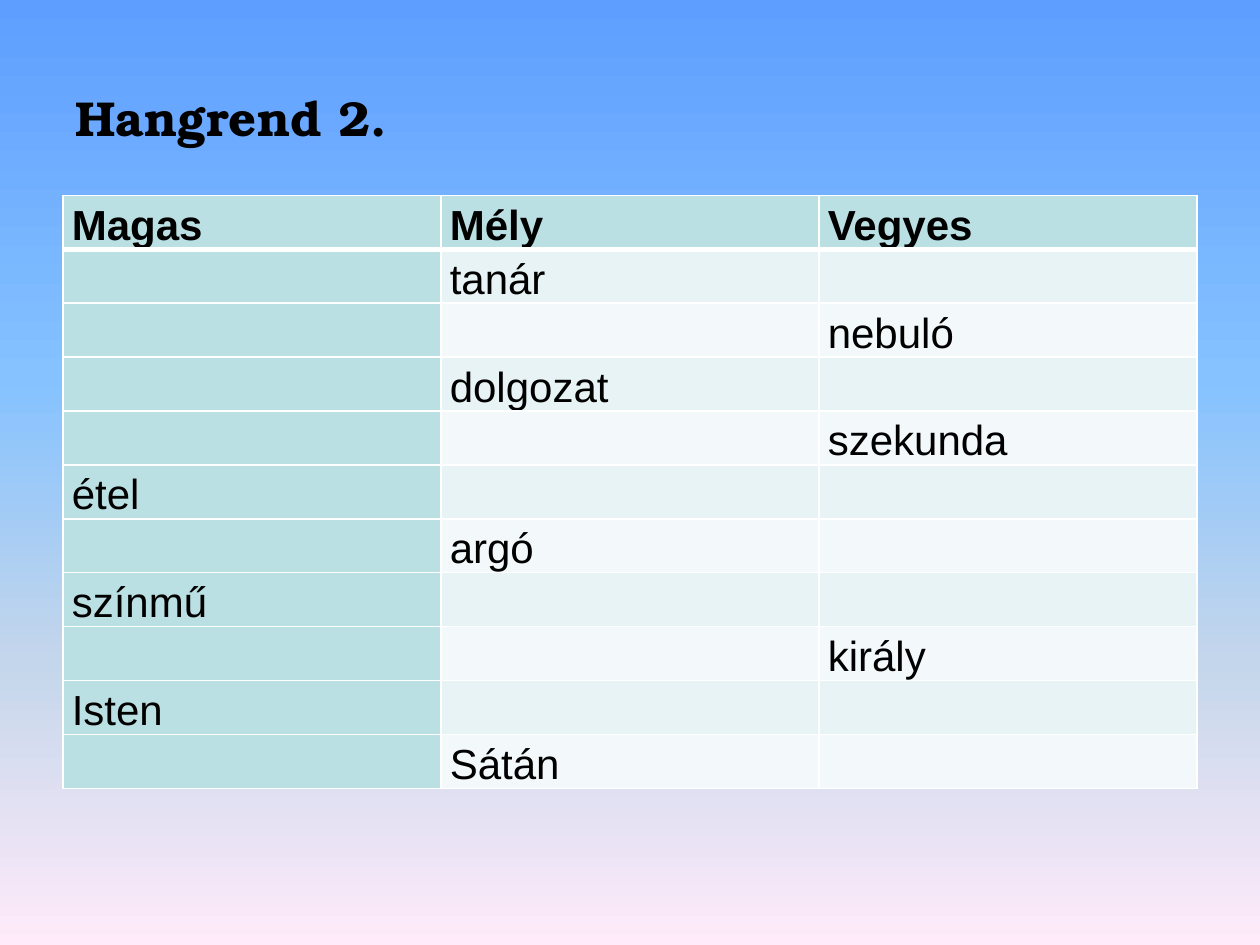
from lxml.etree import SubElement
from pptx import Presentation
from pptx.dml.color import RGBColor as RGB
from pptx.enum.text import MSO_ANCHOR as ANCHOR, PP_ALIGN as ALIGN
from pptx.oxml.ns import qn
from pptx.util import Inches, Pt

COLORS = {
    "text": "000000",
    "border": "FFFFFF",
    "head": "BBE0E3",
    "odd": "E7F3F4",
    "even": "F3F9FA",
}
SKY = [(0, "5E9EFF"), (40, "85C2FF"), (70, "C4D6EB"), (100, "FFEBFA")]
HEADINGS = ["Magas", "Mély", "Vegyes"]
WORDS = [
    ("tanár", "Mély"),
    ("nebuló", "Vegyes"),
    ("dolgozat", "Mély"),
    ("szekunda", "Vegyes"),
    ("étel", "Magas"),
    ("argó", "Mély"),
    ("színmű", "Magas"),
    ("király", "Vegyes"),
    ("Isten", "Magas"),
    ("Sátán", "Mély"),
]


def write(tf, text, font="Arial", size=24, bold=False, spacing=None):
    p = tf.paragraphs[0]
    p.alignment = ALIGN.LEFT
    p.line_spacing = spacing
    r = p.add_run()
    r.text = text
    r.font.name = font
    r.font.size = Pt(size)
    r.font.bold = bold
    r.font.color.rgb = RGB.from_string(COLORS["text"])


class Deck:
    def __init__(self, width, height):
        self.prs = Presentation()
        self.prs.slide_width = Inches(width)
        self.prs.slide_height = Inches(height)
        self.slide = self.prs.slides.add_slide(self.prs.slide_layouts[5])

    def box(self, x, y, w, h):
        width, height = self.prs.slide_width, self.prs.slide_height
        return int(x * width), int(y * height), int(w * width), int(h * height)

    def background(self, stops):
        fill = self.slide.background.fill
        fill.gradient()
        fill.gradient_angle = 270
        gs_list = self.slide.element.find(".//" + qn("a:gsLst"))
        for gs in list(gs_list):
            gs_list.remove(gs)
        for position, color in stops:
            gs = SubElement(gs_list, qn("a:gs"), pos=str(position * 1000))
            SubElement(gs, qn("a:srgbClr"), val=color)

    def title(self, text, *share):
        sp = self.slide.shapes.title
        sp.left, sp.top, sp.width, sp.height = self.box(*share)
        sp.text_frame.vertical_anchor = ANCHOR.MIDDLE
        write(sp.text_frame, text, font="TeX Gyre Bonum", size=28, bold=True)

    def borders(self, cell, top, bottom):
        tc_pr = cell._tc.get_or_add_tcPr()
        for side, width in zip("LRTB", (1, 1, top, bottom)):
            ln = SubElement(tc_pr, qn(f"a:ln{side}"), w=str(Pt(width)))
            fill = SubElement(ln, qn("a:solidFill"))
            SubElement(fill, qn("a:srgbClr"), val=COLORS["border"])

    def table(self, rows, *share):
        box = self.box(*share)
        table = self.slide.shapes.add_table(len(rows), len(rows[0]), *box).table
        for i, row in enumerate(rows):
            table.rows[i].height = box[3] // len(rows)
            for j, text in enumerate(row):
                cell = table.cell(i, j)
                cell.margin_left = cell.margin_right = Inches(0.07)
                cell.margin_top = cell.margin_bottom = 0
                self.borders(cell, 3 if i == 1 else 1, 3 if i == 0 else 1)
                band = "head" if i == 0 or j == 0 else "odd" if i % 2 else "even"
                cell.fill.solid()
                cell.fill.fore_color.rgb = RGB.from_string(COLORS[band])
                if text:
                    write(cell.text_frame, text, bold=i == 0, spacing=1.15)


def main():
    deck = Deck(10, 7.5)
    deck.background(SKY)
    deck.title("Hangrend 2.", 0.05, 0.04, 0.9, 1.25 / 7.5)
    rows = [HEADINGS] + [
        [word if kind == heading else "" for heading in HEADINGS]
        for word, kind in WORDS
    ]
    deck.table(rows, 0.05, 1.55 / 7.5, 0.9, 4.71 / 7.5)
    deck.prs.save("out.pptx")


if __name__ == "__main__":
    main()
